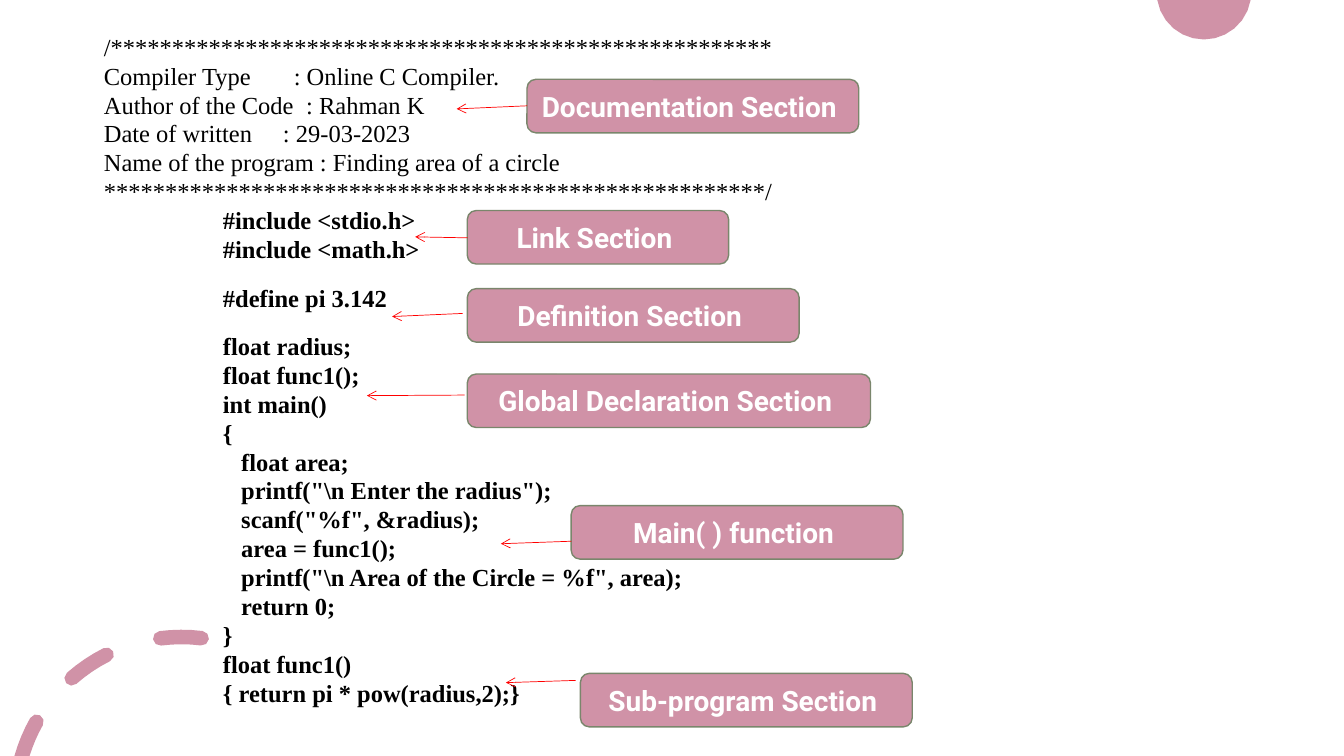
import math

import lxml.etree
import pptx
import pptx.dml.color
import pptx.enum.shapes
import pptx.enum.text
import pptx.oxml.ns
import pptx.util

Pt = pptx.util.Pt
qn = pptx.oxml.ns.qn
ROSE = pptx.dml.color.RGBColor(0xD0, 0x92, 0xA7)
OLIVE = pptx.dml.color.RGBColor(0x7A, 0x86, 0x6C)
RED = pptx.dml.color.RGBColor(0xFF, 0x00, 0x00)
BLACK = pptx.dml.color.RGBColor(0x00, 0x00, 0x00)
WHITE = pptx.dml.color.RGBColor(0xFF, 0xFF, 0xFF)

LINE_GAP = 6
BLOCK_GAP = 19.7
CODE_INDENT = 85
BODY_INDENT = 13.1
STARS = "*" * 54

HEADER = [
    ("/" + STARS, "", 0),
    ("Compiler Type", ": Online C Compiler.", 26.25),
    ("Author of the Code", ": Rahman K", 4.38),
    ("Date of written", ": 29-03-2023", 17.5),
    ("Name of the program", ": Finding area of a circle", 0),
    (STARS + "/", "", 0),
]

CODE_BLOCKS = [
    ["#include <stdio.h>", "#include <math.h>"],
    ["#define pi 3.142"],
    [
        "float radius;",
        "float func1();",
        "int main()",
        "{",
        "\tfloat area;",
        '\tprintf("\\n Enter the radius");',
        '\tscanf("%f", &radius);',
        "\tarea = func1();",
        '\tprintf("\\n Area of the Circle = %f", area);',
        "\treturn 0;",
        "}",
        "float func1()",
        "{ return pi * pow(radius,2);}",
    ],
]

LABELS = [
    ("Documentation Section ", 376.4, 56.7, 237),
    ("Link Section ", 333.8, 150.4, 186.7),
    ("Definition Section ", 333.8, 206.2, 237),
    ("Global Declaration Section ", 333.8, 267.2, 288),
    ("Main( ) function ", 408, 361.2, 237),
    ("Sub-program Section ", 414.6, 481, 237),
]

ARROWS = [
    (376.6, 75.6, 326.2, 77.8),
    (334.1, 169.9, 296.6, 169.2),
    (330.5, 223.9, 280.1, 226.1),
    (331.9, 282.2, 262.1, 282.6),
    (408.2, 386.6, 357.8, 388.4),
    (411.1, 486, 361.4, 487.6),
]

RING_X, RING_Y, RING_RADIUS, HALF_DASH = 129.6, 573.8, 118.8, 5.2


def arc(cx, cy, radius, start, end, steps=4):
    points = []
    for i in range(steps + 1):
        angle = math.radians(start + (end - start) * i / steps)
        points.append((cx + radius * math.cos(angle), cy - radius * math.sin(angle)))
    return points


def ring_arc(offset, start, end):
    return arc(RING_X, RING_Y, RING_RADIUS + offset, start, end)


def round_end(angle, turn):
    center = ring_arc(0, angle, angle)[0]
    return arc(*center, HALF_DASH, angle + turn, angle + turn + 180)[1:-1]


def dash(start, outer_end, inner_end):
    cap = round_end(outer_end, 0) if outer_end == inner_end else []
    return (
        ring_arc(HALF_DASH, start, outer_end)
        + cap
        + ring_arc(-HALF_DASH, inner_end, start)
        + round_end(start, 180)
    )


def add_outline(slide, contours):
    contours = [[(Pt(x), Pt(y)) for x, y in contour] for contour in contours]
    builder = slide.shapes.build_freeform(*contours[0][0], scale=1)
    for number, contour in enumerate(contours):
        if number:
            builder.move_to(*contour[0])
        builder.add_line_segments(contour[1:], close=True)
    sp = builder.convert_to_shape()
    sp.shadow.inherit = False
    sp.fill.solid()
    sp.fill.fore_color.rgb = ROSE
    sp.line.fill.background()


def add_run(p, text, font, size, color, bold):
    r = p.add_run()
    r.text = text
    r.font.name = font
    r.font.size = Pt(size)
    r.font.color.rgb = color
    r.font.bold = bold
    return r


def add_code_line(tf, text, left=0, before=LINE_GAP, bold=False):
    p = tf.add_paragraph() if tf.paragraphs[0].runs else tf.paragraphs[0]
    p.alignment = pptx.enum.text.PP_ALIGN.LEFT
    p.line_spacing = 0.7
    p.space_before = Pt(before)
    pPr = p._p.get_or_add_pPr()
    pPr.set("marL", str(Pt(left)))
    pPr.set("indent", "0")
    lxml.etree.SubElement(pPr, qn("a:buNone"))
    add_run(p, text, "Times New Roman", 17.5, BLACK, bold)
    return p


def add_header_line(tf, name, value, extra):
    p = add_code_line(tf, name)
    if value:
        gap = add_run(p, " ", "Times New Roman", 17.5, BLACK, False)
        gap.font._element.set("spc", str(round(extra * 100)))
        add_run(p, value, "Times New Roman", 17.5, BLACK, False)


def fill_program(body):
    body.left, body.top, body.width, body.height = Pt(67), Pt(23.8), Pt(828), Pt(502)
    tf = body.text_frame
    tf.word_wrap = True
    tf.auto_size = pptx.enum.text.MSO_AUTO_SIZE.NONE
    tf.vertical_anchor = pptx.enum.text.MSO_ANCHOR.TOP
    tf.margin_left = tf.margin_right = Pt(7.2)
    tf.margin_top, tf.margin_bottom = Pt(4.5), 0
    for line in HEADER:
        add_header_line(tf, *line)
    for number, block in enumerate(CODE_BLOCKS):
        for row, text in enumerate(block):
            left = CODE_INDENT + (BODY_INDENT if text.startswith("\t") else 0)
            before = BLOCK_GAP if number and not row else LINE_GAP
            add_code_line(tf, text.lstrip("\t"), left, before, True)


def add_label(slide, text, left, top, width):
    kind = pptx.enum.shapes.MSO_SHAPE.ROUNDED_RECTANGLE
    sp = slide.shapes.add_shape(kind, Pt(left), Pt(top), Pt(width), Pt(38.2))
    sp.shadow.inherit = False
    sp.fill.solid()
    sp.fill.fore_color.rgb = ROSE
    sp.line.color.rgb = OLIVE
    sp.line.width = Pt(1)
    tf = sp.text_frame
    tf.word_wrap = True
    tf.vertical_anchor = pptx.enum.text.MSO_ANCHOR.MIDDLE
    p = tf.paragraphs[0]
    p.alignment = pptx.enum.text.PP_ALIGN.CENTER
    add_run(p, text, "Roboto", 20, WHITE, True)


def add_arrow(slide, *ends):
    kind = pptx.enum.shapes.MSO_CONNECTOR.STRAIGHT
    line = slide.shapes.add_connector(kind, *[Pt(v) for v in ends])
    line.line.color.rgb = RED
    line.line.width = Pt(0.5)
    lxml.etree.SubElement(line.line._get_or_add_ln(), qn("a:tailEnd"), type="arrow")
    lxml.etree.SubElement(line._element.spPr, qn("a:effectLst"))


def main():
    prs = pptx.Presentation()
    prs.slide_width, prs.slide_height = Pt(960), Pt(540)
    slide = prs.slides.add_slide(prs.slide_layouts[1])
    title = slide.shapes.title.element
    title.getparent().remove(title)
    add_outline(slide, [arc(860, -5.6, 33.8, 189.54, 350.46, 12)])
    dashes = [(150.6, 164.2, 162.69), (116.7, 131.3, 131.3), (83, 97.3, 97.3)]
    add_outline(slide, [dash(*angles) for angles in dashes])
    fill_program(slide.placeholders[1])
    for label in LABELS:
        add_label(slide, *label)
    for arrow in ARROWS:
        add_arrow(slide, *arrow)
    prs.save("out.pptx")


if __name__ == "__main__":
    main()
